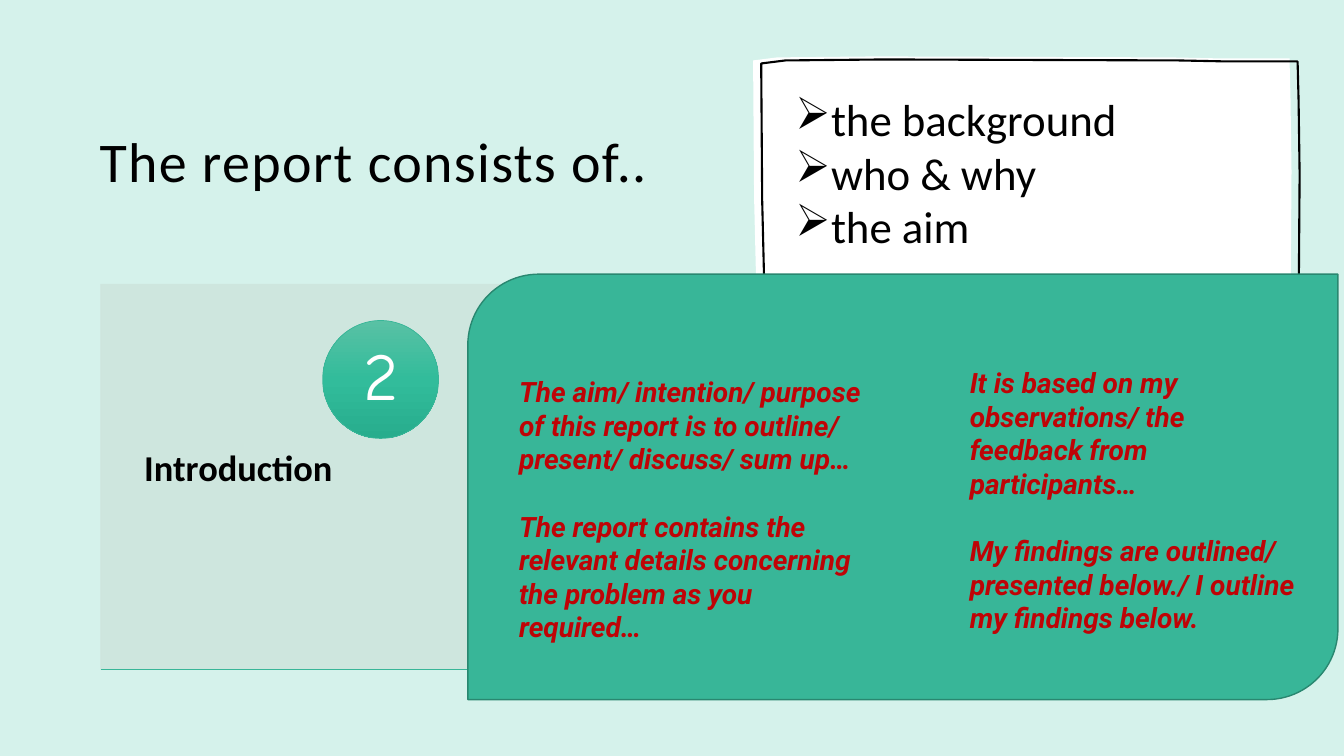
import copy

import lxml.etree
import pptx
import pptx.dml.color
import pptx.enum.shapes
import pptx.enum.text
import pptx.oxml.ns
import pptx.util

Inches = pptx.util.Inches
Pt = pptx.util.Pt
RGBColor = pptx.dml.color.RGBColor
SHAPE = pptx.enum.shapes.MSO_SHAPE
ALIGN = pptx.enum.text.PP_ALIGN
ANCHOR = pptx.enum.text.MSO_ANCHOR
qn = pptx.oxml.ns.qn

MINT = RGBColor(0xD5, 0xF2, 0xEB)
SAGE = RGBColor(0xCE, 0xE5, 0xDD)
TEAL = RGBColor(0x38, 0xB6, 0x98)
DARK_TEAL = RGBColor(0x29, 0x87, 0x70)
BADGE_STOPS = [
    (0, RGBColor(0x59, 0xC1, 0xA4)),
    (0.5, RGBColor(0x32, 0xBC, 0x9B)),
    (1, RGBColor(0x27, 0xAD, 0x8D)),
]
RED = RGBColor(0xBF, 0x03, 0x06)
BLACK = RGBColor(0, 0, 0)
WHITE = RGBColor(0xFF, 0xFF, 0xFF)

SHEET_EDGE = [
    (560, 114), (559, 41), (558, 2), (488, 2), (440, 1), (148, 0), (50, 1),
    (26, 4), (27, 140), (29, 223), (28, 272), (0, 297), (29, 310), (29, 468),
    (29, 514), (28, 561), (28, 619), (326, 620), (549, 620), (553, 597),
    (553, 520), (558, 393),
]


def add_text(slide, box, lines, size, font, color, bold=None, italic=None,
             anchor=ANCHOR.TOP, inset=(0.1, 0.05)):
    """Place a wrapped text box with one paragraph per line; return its paragraphs."""
    tf = slide.shapes.add_textbox(*map(Inches, box)).text_frame
    tf.word_wrap = True
    tf.vertical_anchor = anchor
    tf.margin_left = tf.margin_right = Inches(inset[0])
    tf.margin_top = tf.margin_bottom = Inches(inset[1])
    tf.text = "\n".join(lines)
    for p in tf.paragraphs:
        for r in p.runs:
            r.font.size, r.font.name = Pt(size), font
            r.font.bold, r.font.italic = bold, italic
            r.font.color.rgb = color
    return tf.paragraphs


def add_box(slide, kind, box, fill, line, width):
    """Place a preset shape with a solid fill and an outline."""
    sp = slide.shapes.add_shape(kind, *map(Inches, box))
    sp.shadow.inherit = False
    sp.fill.solid()
    sp.fill.fore_color.rgb = fill
    sp.line.color.rgb = line
    sp.line.width = Pt(width)
    return sp


def add_title(slide, box):
    """Place the centred, slightly letter-spaced heading."""
    p = add_text(slide, box, ["The report consists of.."], 40, "Calibri", BLACK,
                 anchor=ANCHOR.MIDDLE)[0]
    p.alignment = ALIGN.CENTER
    p.space_after = Pt(6)
    p.runs[0].font._element.set("spc", "100")


def add_sheet(slide, left, top):
    """Place a hand-drawn white sheet and its offset black outline."""
    for shift_x, shift_y, filled in [(0, 0, True), (0.08, 0.03, False)]:
        builder = slide.shapes.build_freeform(*SHEET_EDGE[0], scale=Inches(0.01))
        builder.add_line_segments(SHEET_EDGE[1:], close=True)
        sp = builder.convert_to_shape(Inches(left + shift_x), Inches(top + shift_y))
        sp.shadow.inherit = False
        if filled:
            sp.fill.solid()
            sp.fill.fore_color.rgb = WHITE
            sp.line.fill.background()
        else:
            sp.fill.background()
            sp.line.color.rgb = BLACK
            sp.line.width = Pt(1.5)


def add_bullets(slide, box):
    """Place the arrow-bulleted list of introduction contents."""
    lines = ["the background", "who & why", "the aim"]
    for p in add_text(slide, box, lines, 32, "Calibri", BLACK):
        pPr = p._p.get_or_add_pPr()
        pPr.set("marL", str(Inches(0.31)))
        pPr.set("indent", str(Inches(-0.31)))
        lxml.etree.SubElement(pPr, qn("a:buChar")).set("char", "➢")


def add_section(slide, box):
    """Place the section panel, its label and its bottom rule."""
    left, top, width, height = box
    sp = add_box(slide, SHAPE.RECTANGLE, box, SAGE, SAGE, 0.5)
    for color in sp._element.spPr.iter(qn("a:srgbClr")):
        lxml.etree.SubElement(color, qn("a:alpha")).set("val", "90000")
    add_text(slide, (left, top + 1.45, width, 2.29), ["Introduction"], 26, "Calibri",
             BLACK, bold=True, inset=(0.43, 0.36))[0].line_spacing = 0.9
    bottom = Inches(top + height)
    rule = slide.shapes.add_connector(pptx.enum.shapes.MSO_CONNECTOR.STRAIGHT,
                                      Inches(left), bottom, Inches(left + width), bottom)
    rule.line.color.rgb = TEAL
    rule.line.width = Pt(0.5)
    lxml.etree.SubElement(rule._element.spPr, qn("a:effectLst"))


def add_badge(slide, box, number):
    """Place a round gradient badge with its number."""
    left, top, width, height = box
    sp = add_box(slide, SHAPE.OVAL, box, TEAL, TEAL, 0.5)
    sp.fill.gradient()
    sp.fill.gradient_angle = 270
    stops = sp._element.spPr.find(qn("a:gradFill")).find(qn("a:gsLst"))
    stops.insert(1, copy.deepcopy(stops[0]))
    for stop, (position, color) in zip(sp.fill.gradient_stops, BADGE_STOPS):
        stop.position = position
        stop.color.rgb = color
    p = add_text(slide, (left + 0.17, top + 0.17, width - 0.34, height - 0.36), [number],
                 48, "Comic Neue", WHITE, anchor=ANCHOR.MIDDLE, inset=(0.1, 0.01))[0]
    p.alignment = ALIGN.CENTER
    p.line_spacing = 0.9


def add_phrases(slide, box):
    """Place the teal card with its two columns of useful phrases."""
    left, top, width, height = box
    add_box(slide, SHAPE.ROUND_2_DIAG_RECTANGLE, box, TEAL, DARK_TEAL, 1)
    columns = [
        ((left + 0.41, top + 0.52, 3.77, 3.62), [
            "The aim/ intention/ purpose of this report is to outline/ present/ discuss/ sum up…",
            "The report contains the relevant details concerning the problem as you required…",
        ]),
        ((left + 4.88, top + 0.42, 3.44, 3.64), [
            "It is based on my observations/ the feedback from participants…",
            "My findings are outlined/",
            "presented below./ I outline my findings below.",
        ]),
    ]
    for column, lines in columns:
        paragraphs = add_text(slide, column, lines, 20, "Roboto", RED, bold=True,
                              italic=True, anchor=ANCHOR.MIDDLE)
        paragraphs[0].space_after = Pt(24)


def main():
    """Build the slide and save it."""
    prs = pptx.Presentation()
    prs.slide_width, prs.slide_height = Inches(13.33), Inches(7.5)
    slide = prs.slides.add_slide(prs.slide_layouts[6])
    slide.background.fill.solid()
    slide.background.fill.fore_color.rgb = MINT
    add_title(slide, (0.13, 0.66, 7.15, 1.85))
    add_sheet(slide, 7.21, 0.56)
    add_section(slide, (1, 2.82, 5.55, 3.82))
    add_bullets(slide, (7.79, 0.86, 4.84, 1.72))
    add_phrases(slide, (4.64, 2.72, 8.63, 4.22))
    add_badge(slide, (3.2, 3.18, 1.15, 1.17), "2")
    prs.save("out.pptx")


if __name__ == "__main__":
    main()
